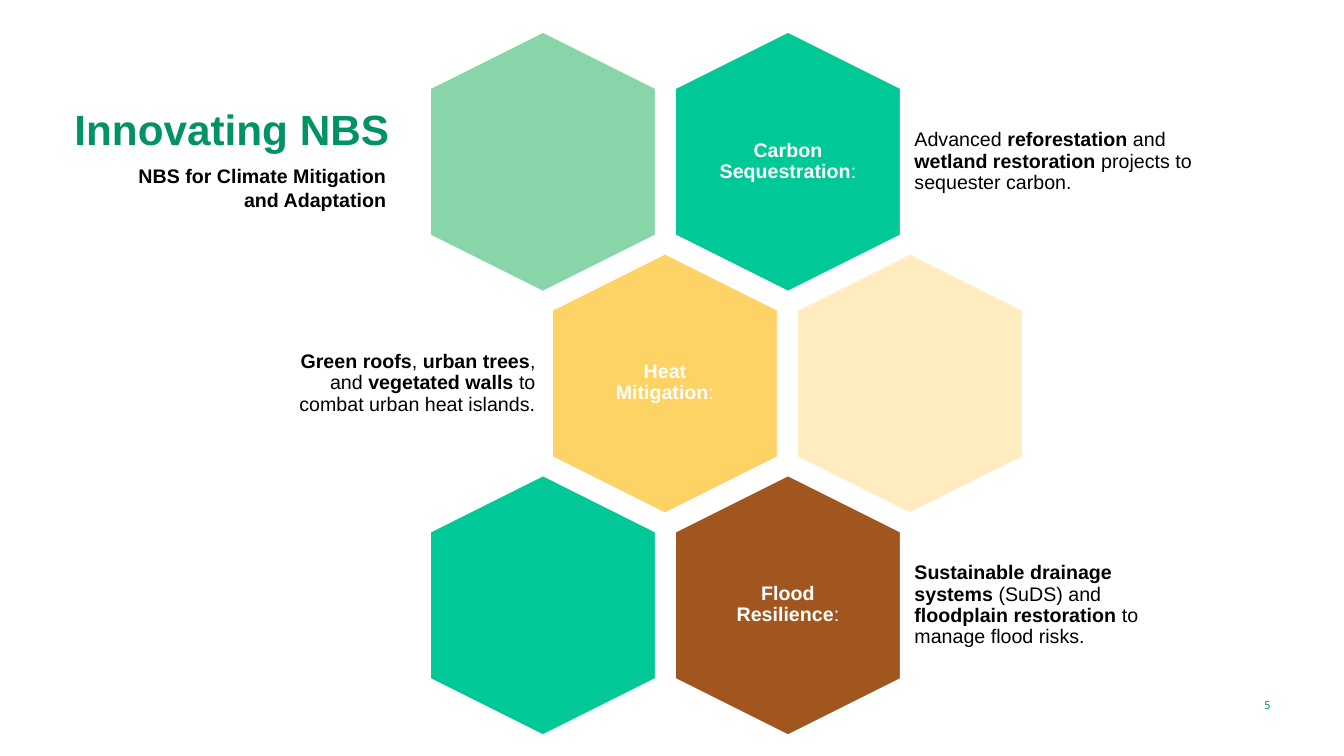
from dataclasses import dataclass

from pptx import Presentation
from pptx.dml.color import RGBColor
from pptx.enum.shapes import MSO_SHAPE
from pptx.enum.text import MSO_ANCHOR, PP_ALIGN
from pptx.slide import Slide
from pptx.util import Inches, Pt

# Colours
WHITE = RGBColor(0xFF, 0xFF, 0xFF)
BLACK = RGBColor(0x00, 0x00, 0x00)
GREEN = RGBColor(0x01, 0x92, 0x66)
EMERALD = RGBColor(0x00, 0xC8, 0x97)
MINT = RGBColor(0x88, 0xD5, 0xA9)
YELLOW = RGBColor(0xFD, 0xD3, 0x65)
CREAM = RGBColor(0xFF, 0xED, 0xC1)
BROWN = RGBColor(0xA1, 0x56, 0x1F)

# Honeycomb grid, in inches
GRID_LEFT, GRID_TOP = 4.09, 0.48
COLUMN_STEP, ROW_STEP, ODD_ROW_SHIFT = 2.43, 2.2, 1.21
HEXAGON_WIDTH, HEXAGON_HEIGHT = 2.59, 2.25


@dataclass
class Hexagon:
    row: int
    column: int
    fill: RGBColor
    label: str = ""
    description: str = ""
    description_on_left: bool = False

    @property
    def left(self) -> float:
        return GRID_LEFT + self.column * COLUMN_STEP + self.row % 2 * ODD_ROW_SHIFT

    @property
    def top(self) -> float:
        return GRID_TOP + self.row * ROW_STEP


@dataclass
class TextBlock:
    left: float
    top: float
    width: float
    height: float
    text: str  # passages between ** marks are bold
    size: float = 14
    color: RGBColor = BLACK
    font: str = "Arial"
    align: PP_ALIGN = PP_ALIGN.LEFT
    anchor: MSO_ANCHOR = MSO_ANCHOR.MIDDLE
    line_spacing: float = 1.0
    inset_x: float = 0.1
    inset_y: float = 0.05


HEXAGONS = [
    Hexagon(0, 1, EMERALD, "**Carbon Sequestration**:",
            "Advanced **reforestation** and **wetland restoration** "
            "projects to sequester carbon."),
    Hexagon(0, 0, MINT),
    Hexagon(1, 0, YELLOW, "**Heat Mitigation**:",
            "**Green roofs**, **urban trees**, and **vegetated walls** "
            "to combat urban heat islands.", True),
    Hexagon(1, 1, CREAM),
    Hexagon(2, 1, BROWN, "**Flood Resilience**:",
            "**Sustainable drainage systems** (SuDS) and "
            "**floodplain restoration** to manage flood risks."),
    Hexagon(2, 0, EMERALD),
]

HEADINGS = [
    TextBlock(0.64, 1.06, 7.27, 0.52, "**Innovating NBS**", 30.2, GREEN,
              anchor=MSO_ANCHOR.BOTTOM),
    TextBlock(1.12, 1.58, 2.81, 0.57, "**NBS for Climate Mitigation and Adaptation**",
              align=PP_ALIGN.RIGHT, anchor=MSO_ANCHOR.TOP),
    TextBlock(11.55, 6.79, 1.15, 0.4, "5", 9, GREEN, "Calibri", PP_ALIGN.RIGHT),
]


def add_text(slide: Slide, block: TextBlock) -> None:
    box = slide.shapes.add_textbox(Inches(block.left), Inches(block.top),
                                   Inches(block.width), Inches(block.height))
    frame_format = {
        "word_wrap": True,
        "vertical_anchor": block.anchor,
        "margin_left": Inches(block.inset_x),
        "margin_right": Inches(block.inset_x),
        "margin_top": Inches(block.inset_y),
        "margin_bottom": Inches(block.inset_y),
    }
    for name, value in frame_format.items():
        setattr(box.text_frame, name, value)
    paragraph = box.text_frame.paragraphs[0]
    paragraph.alignment = block.align
    paragraph.line_spacing = block.line_spacing
    for index, passage in enumerate(block.text.split("**")):
        if not passage:
            continue
        run = paragraph.add_run()
        run.text = passage
        font_format = {"name": block.font, "size": Pt(block.size), "bold": index % 2 == 1}
        for name, value in font_format.items():
            setattr(run.font, name, value)
        run.font.color.rgb = block.color


def add_hexagon(slide: Slide, hexagon: Hexagon) -> None:
    shape = slide.shapes.add_shape(MSO_SHAPE.HEXAGON, Inches(hexagon.left), Inches(hexagon.top),
                                   Inches(HEXAGON_WIDTH), Inches(HEXAGON_HEIGHT))
    shape.rotation = 90
    shape.shadow.inherit = False
    shape.fill.solid()
    shape.fill.fore_color.rgb = hexagon.fill
    shape.line.color.rgb = WHITE
    shape.line.width = Pt(2)
    if not hexagon.label:
        return

    # Label inside the hexagon, description beside it
    body = {"line_spacing": 0.9, "inset_x": 0.06, "inset_y": 0.06}
    add_text(slide, TextBlock(hexagon.left + 0.52, hexagon.top + 0.23, 1.55, 1.78,
                              hexagon.label, color=WHITE, align=PP_ALIGN.CENTER, **body))
    if hexagon.description_on_left:
        offset, width, align = -2.72, 2.79, PP_ALIGN.RIGHT
    else:
        offset, width, align = 2.49, 2.89, PP_ALIGN.LEFT
    add_text(slide, TextBlock(hexagon.left + offset, hexagon.top + 0.35, width, 1.55,
                              hexagon.description, align=align, **body))


def main() -> None:
    presentation = Presentation()
    presentation.slide_width = Inches(13.33)
    presentation.slide_height = Inches(7.5)
    slide = presentation.slides.add_slide(presentation.slide_layouts[6])
    for hexagon in HEXAGONS:
        add_hexagon(slide, hexagon)
    for heading in HEADINGS:
        add_text(slide, heading)
    presentation.save("out.pptx")


if __name__ == "__main__":
    main()
